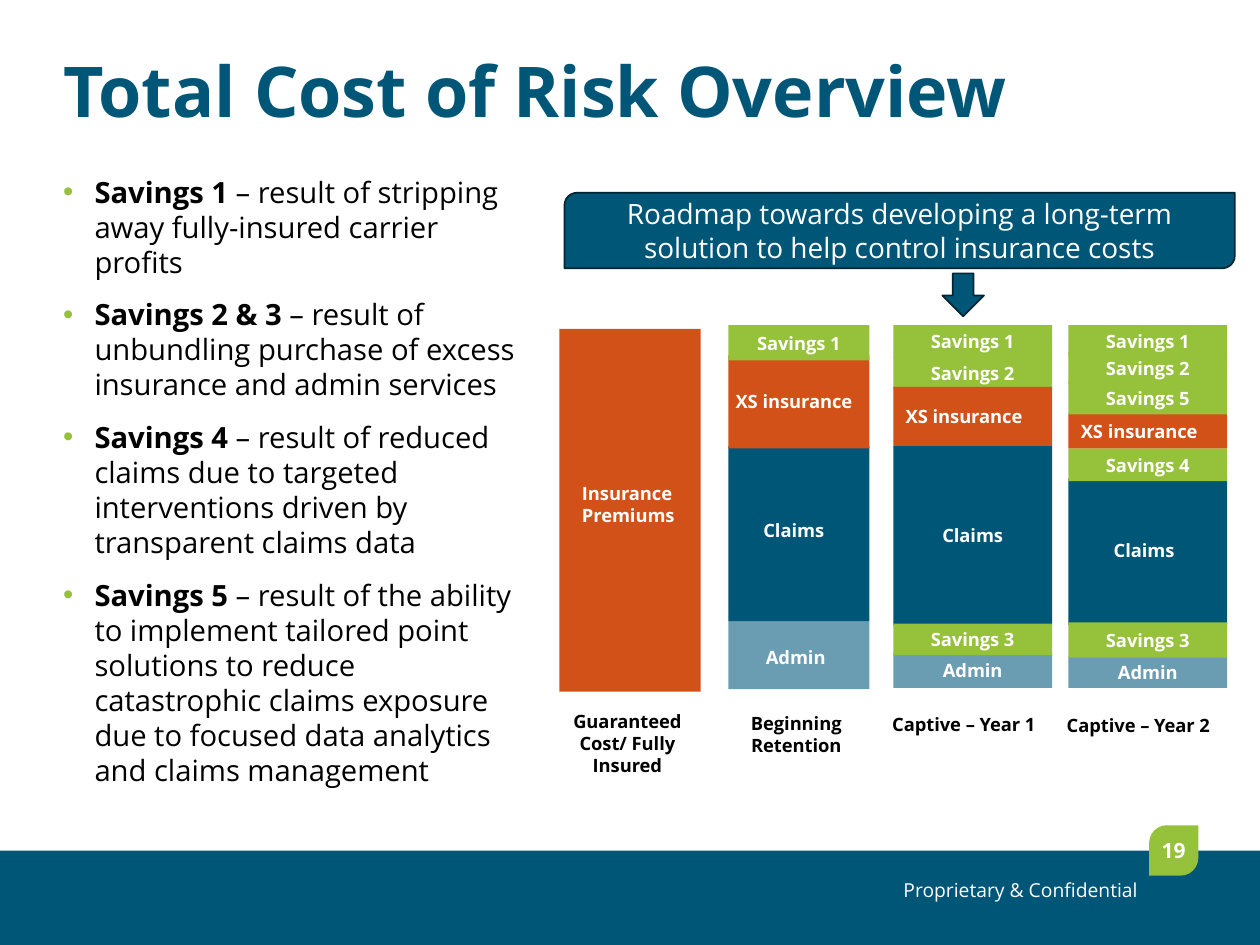
from lxml import etree
from pptx import Presentation
from pptx import util as u
from pptx.dml.color import RGBColor
from pptx.enum import shapes, text
from pptx.oxml.ns import qn

NAVY = RGBColor(0x00, 0x56, 0x77)
OUTLINE = RGBColor(0x00, 0x26, 0x34)
GREEN = RGBColor(0x96, 0xC1, 0x3A)
ORANGE = RGBColor(0xD2, 0x51, 0x19)
STEEL = RGBColor(0x6B, 0x9D, 0xB2)
WHITE = RGBColor(0xFF, 0xFF, 0xFF)
BLACK = RGBColor(0x00, 0x00, 0x00)

LEFT, CENTER, RIGHT = text.PP_ALIGN.LEFT, text.PP_ALIGN.CENTER, text.PP_ALIGN.RIGHT
FLUSH = dict.fromkeys(("margin_left", "margin_top", "margin_right", "margin_bottom"), 0)
LABEL = {"name": "Open Sans", "size": u.Pt(10.5), "bold": True}

SAVINGS = [
    ("Savings 1 ", "– result of stripping away fully-insured carrier profits"),
    ("Savings 2 & 3 ", "– result of unbundling purchase of excess insurance and admin services"),
    ("Savings 4 ", "– result of reduced claims due to targeted interventions driven by "
                   "transparent claims data"),
    ("Savings 5 ", "– result of the ability to implement tailored point solutions to reduce "
                   "catastrophic claims exposure due to focused data analytics and claims "
                   "management"),
]

# Each bar: left, width, layers as (top, height, colour, label), later ones on top
BARS = [
    (4.44, 1.12, [(2.61, 2.88, ORANGE, "")]),
    (5.78, 1.12, [(4.93, 0.54, STEEL, ""), (3.54, 1.39, NAVY, ""),
                  (2.82, 0.74, ORANGE, ""), (2.58, 0.28, GREEN, "Savings 1")]),
    (7.09, 1.26, [(5.18, 0.28, STEEL, "Admin"), (3.54, 1.42, NAVY, "Claims"),
                  (4.95, 0.25, GREEN, "Savings 3"), (2.58, 0.26, GREEN, "Savings 1"),
                  (2.83, 0.26, GREEN, "Savings 2"), (3.07, 0.47, ORANGE, "XS insurance")]),
    (8.48, 1.26, [(5.21, 0.25, STEEL, "Admin"), (3.8, 1.16, NAVY, ""),
                  (3.56, 0.26, GREEN, "Savings 4"), (4.94, 0.28, GREEN, "Savings 3"),
                  (3.28, 0.28, ORANGE, "XS insurance"), (3.03, 0.26, GREEN, "Savings 5"),
                  (2.58, 0.26, GREEN, "Savings 1"), (2.79, 0.26, GREEN, "Savings 2")]),
]

# Labels set off-centre on their layers
LAYER_LABELS = [
    ((4.52, 3.78, 1.05, 0.45), ["Insurance", "Premiums"]),
    ((5.98, 5.08, 1.05, 0.28), ["Admin"]),
    ((5.96, 4.07, 1.05, 0.28), ["Claims"]),
    ((8.74, 4.23, 1.05, 0.28), ["Claims"]),
    ((5.74, 3.05, 1.27, 0.28), ["XS insurance"]),
]
CAPTIONS = [
    ((4.41, 5.59, 1.14, 0.63), "Guaranteed Cost/ Fully Insured"),
    ((5.75, 5.6, 1.14, 0.45), "Beginning Retention"),
    ((6.95, 5.61, 1.4, 0.28), "Captive – Year 1"),
    ((8.28, 5.62, 1.51, 0.28), "Captive – Year 2"),
]


def apply(target, values):
    for attribute, value in values.items():
        setattr(target, attribute, value)


def place(placeholder, box):
    apply(placeholder, dict(zip(("left", "top", "width", "height"), map(u.Inches, box))))


def add_run(paragraph, words, color, font):
    run = paragraph.add_run()
    run.text = words
    apply(run.font, font)
    run.font.color.rgb = color


def write(frame, lines, color, align=LEFT, font=LABEL):
    frame.word_wrap = True
    for number, line in enumerate(lines):
        paragraph = frame.add_paragraph() if number else frame.paragraphs[0]
        paragraph.alignment = align
        add_run(paragraph, line, color, font)


def add_block(slide, kind, box, fill, label="", align=CENTER, font=LABEL, line=None):
    block = slide.shapes.add_shape(kind, *map(u.Inches, box))
    block.shadow.inherit = False
    block.fill.solid()
    block.fill.fore_color.rgb = fill
    if line is None:
        block.line.fill.background()
    else:
        block.line.color.rgb = line
        block.line.width = u.Pt(1)
    if label:
        block.text_frame.vertical_anchor = text.MSO_ANCHOR.MIDDLE
        write(block.text_frame, [label], WHITE, align, font)
    return block


def add_label(slide, box, lines, color, align=LEFT, font=LABEL):
    label = slide.shapes.add_textbox(*map(u.Inches, box))
    write(label.text_frame, lines, color, align, font)


def add_bullet(paragraph):
    properties = paragraph._p.get_or_add_pPr()
    properties.set("marL", str(u.Inches(0.25)))
    properties.set("indent", str(-u.Inches(0.25)))
    bullet_color = etree.SubElement(properties, qn("a:buClr"))
    etree.SubElement(bullet_color, qn("a:srgbClr"), val=str(GREEN))
    etree.SubElement(properties, qn("a:buFont"), typeface="Arial")
    etree.SubElement(properties, qn("a:buChar"), char="•")


def fill_title(title):
    place(title, (0.5, 0.35, 9.01, 0.56))
    apply(title.text_frame, {**FLUSH, "margin_top": u.Inches(0.03),
                             "vertical_anchor": text.MSO_ANCHOR.TOP,
                             "auto_size": text.MSO_AUTO_SIZE.NONE})
    write(title.text_frame, ["Total Cost of Risk Overview"], NAVY,
          font={**LABEL, "size": u.Pt(40)})


def fill_savings(body):
    place(body, (0.5, 1.38, 3.69, 5.26))
    frame = body.text_frame
    apply(frame, {**FLUSH, "vertical_anchor": text.MSO_ANCHOR.TOP,
                  "auto_size": text.MSO_AUTO_SIZE.NONE, "word_wrap": True})
    for number, (lead, result) in enumerate(SAVINGS):
        paragraph = frame.add_paragraph() if number else frame.paragraphs[0]
        add_bullet(paragraph)
        apply(paragraph, {"alignment": LEFT, "line_spacing": 1.0,
                          "space_before": u.Pt(10 if number else 0)})
        for words, bold in ((lead, True), (result, False)):
            add_run(paragraph, words, BLACK, {**LABEL, "size": u.Pt(16.7), "bold": bold})


def main():
    kinds = shapes.MSO_SHAPE
    prs = Presentation()
    prs.slide_width, prs.slide_height = u.Inches(10), u.Inches(7.5)
    slide = prs.slides.add_slide(prs.slide_layouts[1])

    # Footer band and page number
    add_block(slide, kinds.RECTANGLE, (0, 6.75, 10, 0.75), NAVY)
    add_label(slide, (5.29, 6.92, 3.84, 0.29), ["Proprietary & Confidential"], WHITE, RIGHT,
              {"name": "Open Sans", "size": u.Pt(11)})
    page_tab = add_block(slide, kinds.ROUND_2_DIAG_RECTANGLE, (9.12, 6.55, 0.39, 0.4), GREEN,
                         "19", font={**LABEL, "size": u.Pt(12)})
    page_tab.adjustments[0] = 0.36
    apply(page_tab.text_frame, FLUSH)

    # Title and explanation of savings
    fill_title(slide.shapes.title)
    fill_savings(slide.placeholders[1])

    # Cost bars
    for left, width, layers in BARS:
        for top, height, color, label in layers:
            align = LEFT if label == "XS insurance" else CENTER
            add_block(slide, kinds.RECTANGLE, (left, top, width, height), color, label, align)
    for box, lines in LAYER_LABELS:
        add_label(slide, box, lines, WHITE)
    for box, caption in CAPTIONS:
        add_label(slide, box, [caption], BLACK, CENTER)

    # Roadmap banner and arrow
    add_block(slide, kinds.DOWN_ARROW, (7.48, 2.17, 0.33, 0.34), NAVY, line=OUTLINE)
    add_block(slide, kinds.ROUND_2_DIAG_RECTANGLE, (4.48, 1.53, 5.32, 0.6), NAVY,
              "Roadmap towards developing a long-term solution to help control insurance costs",
              font={"name": "Open Sans", "size": u.Pt(16)}, line=OUTLINE)

    prs.save("out.pptx")


if __name__ == "__main__":
    main()
